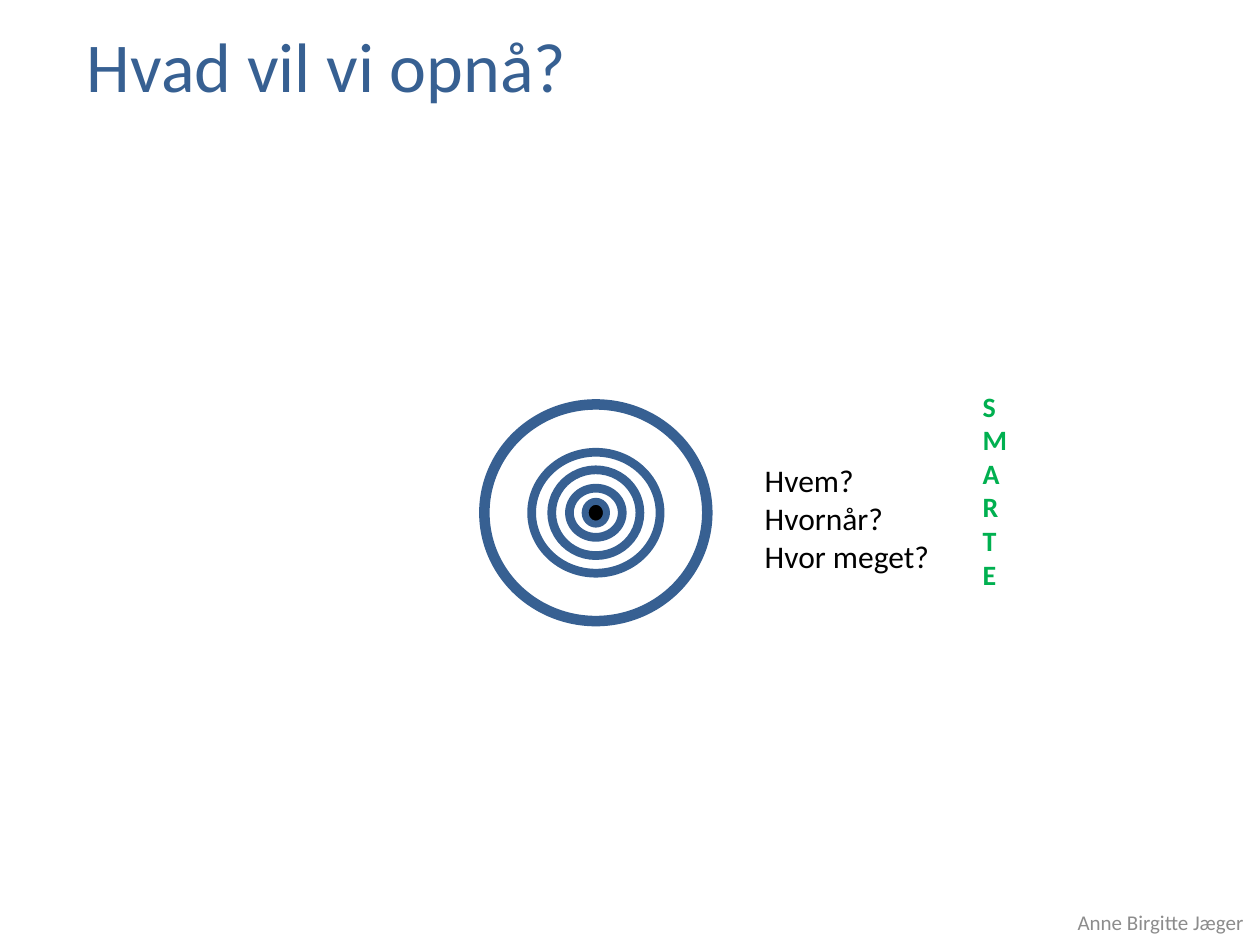
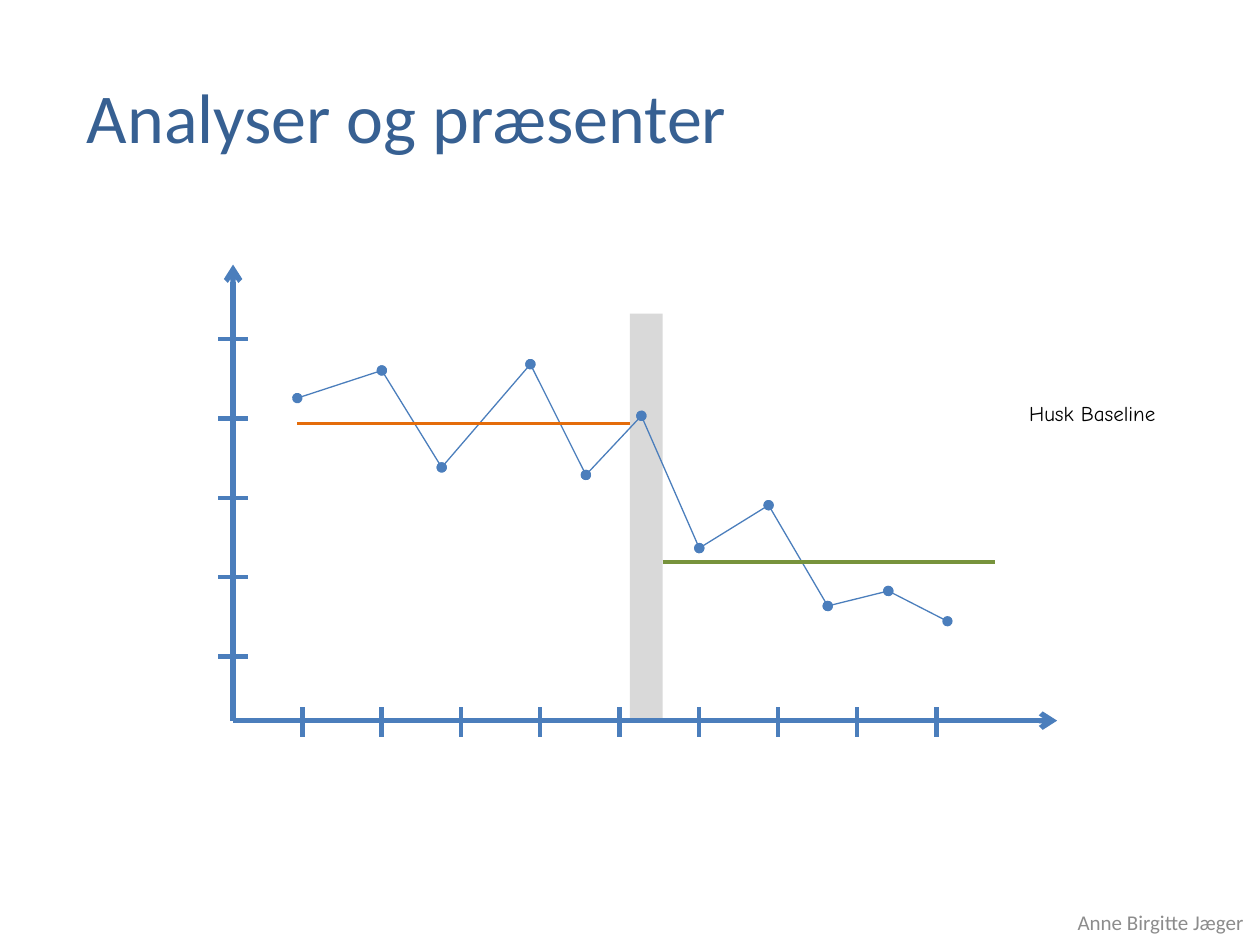
from dataclasses import dataclass
from itertools import pairwise

from lxml.etree import SubElement
from pptx import Presentation
from pptx.dml.color import RGBColor
from pptx.enum.shapes import MSO_CONNECTOR, MSO_SHAPE
from pptx.enum.text import MSO_ANCHOR, MSO_AUTO_SIZE, PP_ALIGN
from pptx.oxml.ns import qn
from pptx.util import Pt


@dataclass(frozen=True)
class Theme:
    font: str = "Calibri"
    note_font: str = "Comic Neue"
    title_size: int = 40
    body_size: int = 18
    letter_size: int = 16
    small_size: int = 12
    navy: str = "376092"
    blue: str = "4B7EBC"
    green: str = "00B050"
    olive: str = "77933C"
    orange: str = "E46C0A"
    band: str = "D9D9D9"
    grey: str = "8C8C8C"
    black: str = "000000"
    white: str = "FFFFFF"


TITLE_ONLY, TITLE_AND_BODY = 5, 1
FOOTER = "Anne Birgitte Jæger"


class Deck:
    def __init__(self, theme):
        self.theme = theme
        self.prs = Presentation()
        self.prs.slide_width, self.prs.slide_height = Pt(720), Pt(540)
        self.slide = None

    def new_slide(self, title, title_top, layout=TITLE_ONLY):
        """Start a slide with the shared title style and footer."""
        t = self.theme
        self.slide = self.prs.slides.add_slide(self.prs.slide_layouts[layout])
        self.fill_text(self.slide.shapes.title, (42.5, title_top, 425.5, 55.4),
                       [title], t.title_size, t.navy)
        self.text((604.8, 512.6, 113, 28.8), FOOTER, t.small_size, t.grey,
                  align=PP_ALIGN.RIGHT, anchor=MSO_ANCHOR.MIDDLE)

    def fill_text(self, holder, box, lines, size, color, font=None, bold=False,
                  align=PP_ALIGN.LEFT, anchor=MSO_ANCHOR.TOP):
        holder.left, holder.top, holder.width, holder.height = map(Pt, box)
        frame = holder.text_frame
        frame.text = "\n".join(lines)
        frame.word_wrap = True
        frame.auto_size = MSO_AUTO_SIZE.NONE
        frame.vertical_anchor = anchor
        for paragraph in frame.paragraphs:
            paragraph.alignment = align
            paragraph.space_before = Pt(0)
            paragraph.font.name = font or self.theme.font
            paragraph.font.size = Pt(size)
            paragraph.font.bold = bold
            paragraph.font.color.rgb = RGBColor.from_string(color)

    def text(self, box, words, size, color, vertical=None, **style):
        holder = self.slide.shapes.add_textbox(*map(Pt, box))
        self.fill_text(holder, box, [words], size, color, **style)
        if vertical:
            holder.text_frame._txBody.bodyPr.set("vert", vertical)

    def plain_list(self, box, lines):
        """Fill the body placeholder with lines that carry no bullet."""
        body = self.slide.placeholders[1]
        self.fill_text(body, box, lines, self.theme.body_size, self.theme.black)
        for paragraph in body.text_frame.paragraphs:
            props = paragraph._p.get_or_add_pPr()
            props.set("marL", "0")
            props.set("indent", "0")
            bullet = SubElement(props, qn("a:buNone"))
            props.remove(bullet)
            props.insert_element_before(bullet, "a:tabLst", "a:defRPr", "a:extLst")

    def shape(self, kind, box, fill=None, line=None, weight=0):
        item = self.slide.shapes.add_shape(kind, *map(Pt, box))
        item.shadow.inherit = False
        if fill:
            item.fill.solid()
            item.fill.fore_color.rgb = RGBColor.from_string(fill)
        else:
            item.fill.background()
        if line:
            item.line.color.rgb = RGBColor.from_string(line)
            item.line.width = Pt(weight)
        else:
            item.line.fill.background()

    def line(self, start, end, color, weight, head=None, tail=None):
        item = self.slide.shapes.add_connector(
            MSO_CONNECTOR.STRAIGHT, *map(Pt, (*start, *end)))
        item.line.color.rgb = RGBColor.from_string(color)
        item.line.width = Pt(weight)
        outline = item.line._get_or_add_ln()
        for tag, style in (("a:headEnd", head), ("a:tailEnd", tail)):
            if style:
                SubElement(outline, qn(tag), type=style)
        SubElement(item._element.spPr, qn("a:effectLst"))


def build_goals(deck):
    t = deck.theme
    deck.new_slide("Hvad vil vi opnå?", 9.4, TITLE_AND_BODY)

    # Target: concentric rings, from the outside in
    center_x, center_y = 340.5, 293
    rings = [
        (127.4, 123.8, None, 6),
        (73.4, 69.1, None, 5),
        (50.4, 49, t.white, 5),
        (30.2, 28.1, t.white, 5),
        (12.2, 13, t.black, 4),
    ]
    for width, height, fill, weight in rings:
        box = (center_x - width / 2, center_y - height / 2, width, height)
        deck.shape(MSO_SHAPE.OVAL, box, fill, t.navy, weight)

    # Questions and the stacked acronym
    deck.plain_list((429.8, 259.9, 242, 72.7), ["Hvem?", "Hvornår?", "Hvor meget?"])
    deck.text((554.4, 218.9, 37.4, 153.4), "SMARTE", t.letter_size, t.green,
              vertical="wordArtVert", bold=True)


def build_analysis(deck):
    t = deck.theme
    deck.new_slide("Analyser og præsenter", 38.2)

    # Change period
    origin_x, origin_y = 133.2, 411.8
    band_left, band_width, band_top = 360, 18.7, 179.3
    deck.shape(MSO_SHAPE.RECTANGLE,
               (band_left, band_top, band_width, origin_y - band_top), t.band)

    # Axes with evenly spaced ticks
    for axis_end in ((origin_x, 151.2), (604.1, origin_y)):
        deck.line((origin_x, origin_y), axis_end, t.blue, 3, tail="arrow")
    tick_gap, tick_half = 45.3, 8.5
    tick_y = origin_y + 1
    for i in range(9):
        x = 172.8 + i * tick_gap
        deck.line((x, tick_y - tick_half), (x, tick_y + tick_half), t.blue, 2.5)
    for i in range(5):
        y = 375.1 - i * tick_gap
        deck.line((origin_x - tick_half, y), (origin_x + tick_half, y), t.blue, 2.5)

    # Measurements
    measurements = [
        (169.9, 227.5), (218.2, 211.7), (252.4, 267.1), (303.1, 208.1),
        (334.8, 271.4), (366.5, 237.6), (399.6, 313.2), (439.2, 288.7),
        (473, 346.3), (507.6, 337.7), (541.4, 355),
    ]
    for start, end in pairwise(measurements):
        deck.line(start, end, t.blue, 0.75, head="oval", tail="oval")

    # Levels before and after the change
    level_length = 190.1
    band_right = band_left + band_width
    for left, y, color in ((band_left - level_length, 241.9, t.orange),
                           (band_right, 321.1, t.olive)):
        deck.line((left, y), (left + level_length, y), color, 2)

    deck.text((581, 225.4, 117.4, 21.8), "Husk Baseline", t.small_size, t.black,
              font=t.note_font)


def main():
    deck = Deck(Theme())
    build_goals(deck)
    build_analysis(deck)
    deck.prs.save("out.pptx")


if __name__ == "__main__":
    main()
